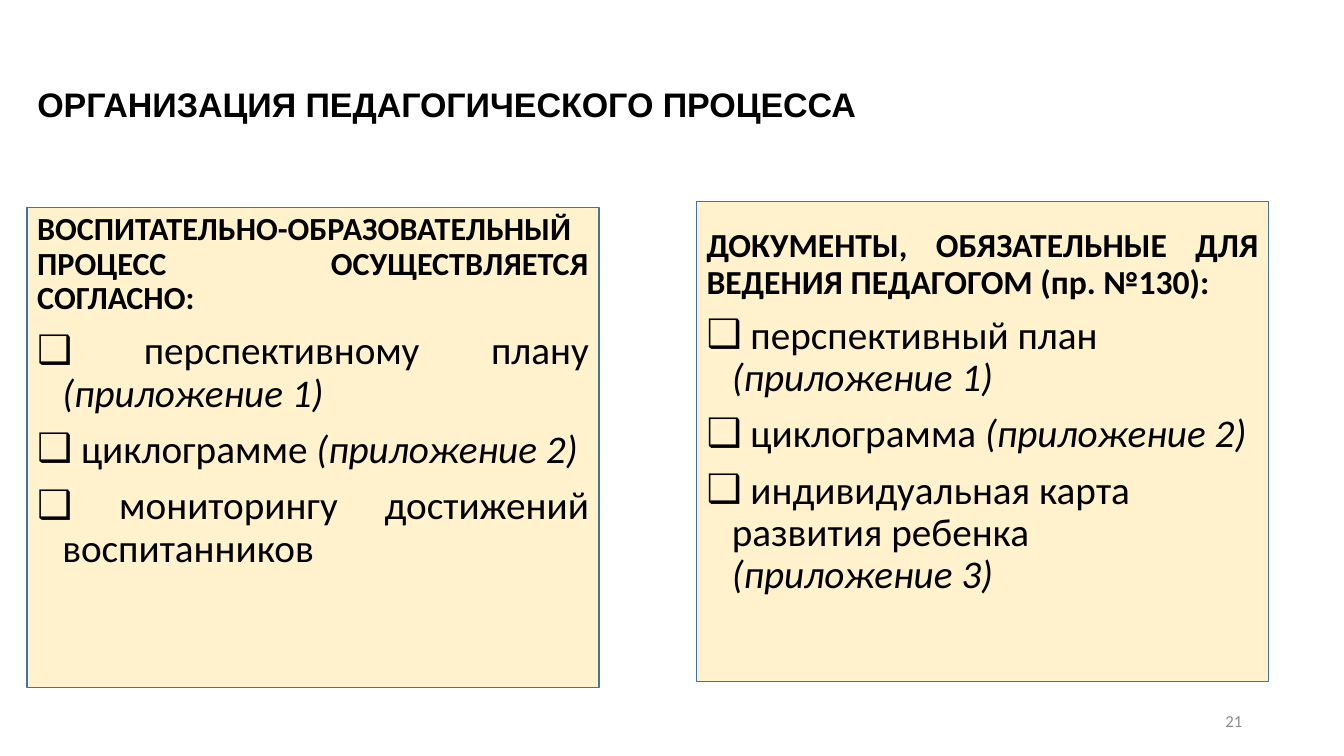
from lxml.etree import SubElement
from pptx import Presentation
from pptx.dml.color import RGBColor
from pptx.enum.shapes import MSO_SHAPE
from pptx.enum.text import MSO_ANCHOR, PP_ALIGN
from pptx.oxml.ns import qn
from pptx.util import Inches, Pt

# Content
TITLE = "ОРГАНИЗАЦИЯ ПЕДАГОГИЧЕСКОГО ПРОЦЕССА"
PAGE_NUMBER = "21"
PANELS = [
    {
        "left": 0.27, "top": 2.06, "text_top": 2.06,
        "heading": "ВОСПИТАТЕЛЬНО-ОБРАЗОВАТЕЛЬНЫЙ ПРОЦЕСС ОСУЩЕСТВЛЯЕТСЯ СОГЛАСНО:",
        "heading_size": 23, "item_align": PP_ALIGN.JUSTIFY,
        "items": [
            ("перспективному плану", "(приложение 1)"),
            ("циклограмме", "(приложение 2)"),
            ("мониторингу достижений воспитанников", ""),
        ],
    },
    {
        "left": 6.91, "top": 2, "text_top": 2.22,
        "heading": "ДОКУМЕНТЫ, ОБЯЗАТЕЛЬНЫЕ ДЛЯ ВЕДЕНИЯ ПЕДАГОГОМ (пр. №130):",
        "heading_size": 24, "item_align": PP_ALIGN.LEFT,
        "items": [
            ("перспективный план", "(приложение 1)"),
            ("циклограмма", "(приложение 2)"),
            ("индивидуальная карта развития ребенка", "(приложение 3)"),
        ],
    },
]
PANEL_WIDTH, PANEL_HEIGHT = 5.67, 4.76
ITEM_SIZE = 28
COLORS = {"text": "000000", "panel": "FFF2CC", "border": "43739E", "number": "8C8C8C"}


def color(name):
    return RGBColor.from_string(COLORS[name])


def add_run(paragraph, text, size, font="Calibri", fill="text", bold=False, italic=False):
    run = paragraph.add_run()
    run.text = text
    run.font.name = font
    run.font.size = Pt(size)
    run.font.bold = bold
    run.font.italic = italic
    run.font.color.rgb = color(fill)


def add_text_frame(left, top, width, height):
    frame = slide.shapes.add_textbox(
        Inches(left), Inches(top), Inches(width), Inches(height)).text_frame
    frame.word_wrap = True
    return frame


def set_paragraph(paragraph, align):
    paragraph.alignment = align
    paragraph.line_spacing = 0.9
    paragraph.space_before = Pt(10)


def add_bullet(paragraph):
    properties = paragraph._p.get_or_add_pPr()
    properties.set("marL", str(Inches(0.25)))
    properties.set("indent", str(-Inches(0.25)))
    SubElement(properties, qn("a:buFont")).set("typeface", "Arial")
    SubElement(properties, qn("a:buChar")).set("char", "❑")


prs = Presentation()
prs.slide_width, prs.slide_height = Inches(13.33), Inches(7.5)
slide = prs.slides.add_slide(prs.slide_layouts[5])

# Title
title = slide.shapes.title
title.left, title.top = Inches(0.27), Inches(0.4)
title.width, title.height = Inches(12.15), Inches(1.45)
title_frame = title.text_frame
title_frame.word_wrap = True
title_frame.vertical_anchor = MSO_ANCHOR.MIDDLE
title_frame.margin_bottom = Inches(0.23)
title_frame.paragraphs[0].alignment = PP_ALIGN.LEFT
add_run(title_frame.paragraphs[0], TITLE, 24.3, font="Arial", bold=True)

# Panels with a heading and a checklist
for panel in PANELS:
    card = slide.shapes.add_shape(
        MSO_SHAPE.RECTANGLE, Inches(panel["left"]), Inches(panel["top"]),
        Inches(PANEL_WIDTH), Inches(PANEL_HEIGHT))
    card.shadow.inherit = False
    card.fill.solid()
    card.fill.fore_color.rgb = color("panel")
    card.line.color.rgb = color("border")
    card.line.width = Pt(1)

    frame = add_text_frame(panel["left"], panel["text_top"], PANEL_WIDTH, PANEL_HEIGHT)
    heading = frame.paragraphs[0]
    set_paragraph(heading, PP_ALIGN.JUSTIFY)
    add_run(heading, panel["heading"], panel["heading_size"], bold=True)
    for name, appendix in panel["items"]:
        item = frame.add_paragraph()
        set_paragraph(item, panel["item_align"])
        add_bullet(item)
        add_run(item, f" {name} " if appendix else f" {name}", ITEM_SIZE)
        if appendix:
            add_run(item, appendix, ITEM_SIZE, italic=True)

# Page number
number_frame = add_text_frame(9.42, 6.95, 3, 0.4)
number_frame.vertical_anchor = MSO_ANCHOR.MIDDLE
number_frame.paragraphs[0].alignment = PP_ALIGN.RIGHT
add_run(number_frame.paragraphs[0], PAGE_NUMBER, 12, fill="number")

prs.save("out.pptx")
